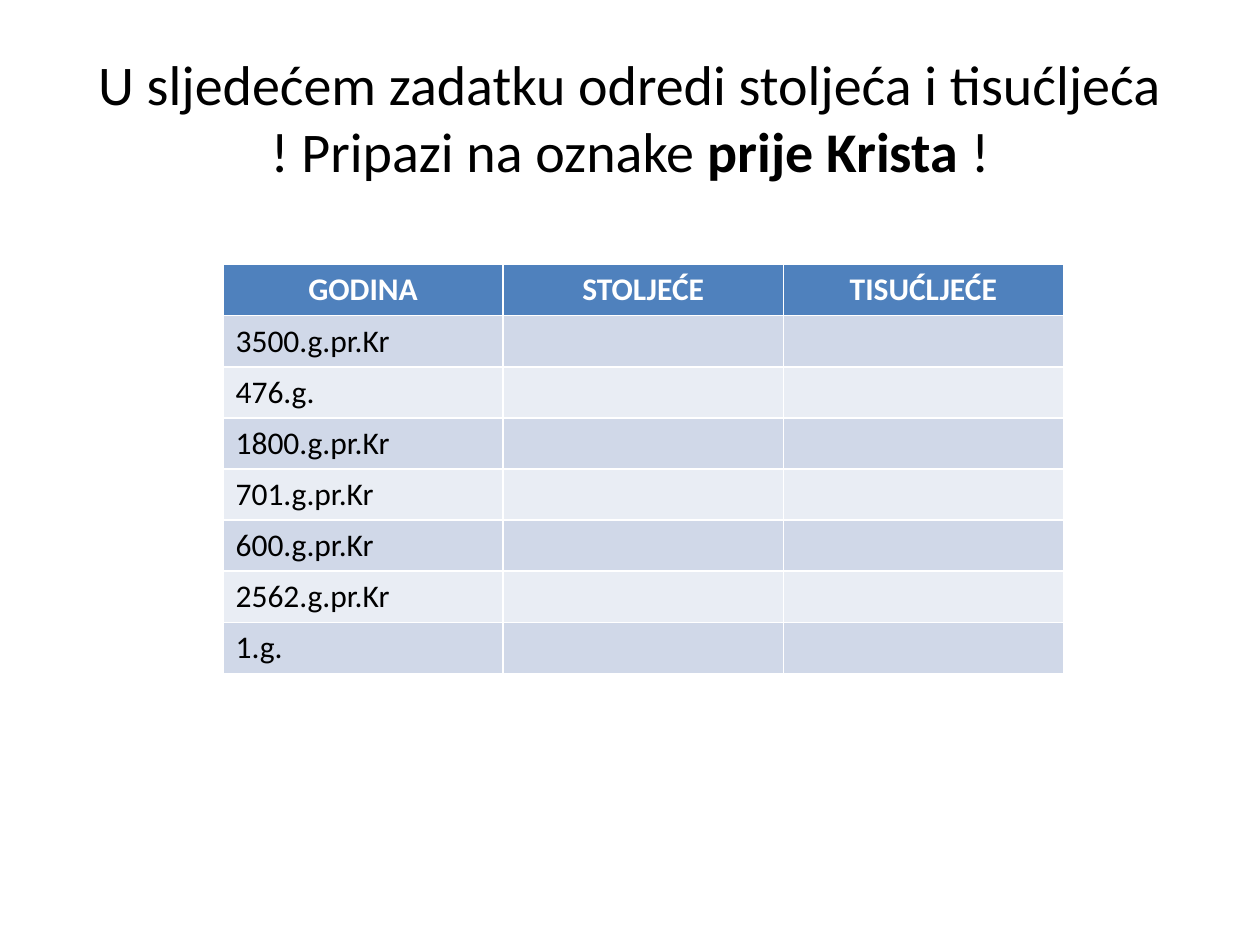
from pptx import Presentation
from pptx.dml.color import RGBColor
from pptx.enum.text import MSO_ANCHOR, MSO_AUTO_SIZE, PP_ALIGN
from pptx.util import Inches, Pt

COLORS = {
    "text": "000000",
    "header_text": "FFFFFF",
    "header": "4F81BD",
    "odd_row": "D0D8E8",
    "even_row": "E9EDF4",
}
HEADINGS = ["GODINA", "STOLJEĆE", "TISUĆLJEĆE"]
YEARS = ["3500.g.pr.Kr", "476.g.", "1800.g.pr.Kr", "701.g.pr.Kr",
         "600.g.pr.Kr", "2562.g.pr.Kr", "1.g."]


class SlideBuilder:
    """Holds the style and the current slide."""

    font_name = "Calibri"
    title_size = Pt(32)
    cell_size = Pt(18)

    def __init__(self, page):
        self.page = page

    def color(self, name):
        return RGBColor.from_string(COLORS[name])

    def style(self, font, size, color):
        font.name = self.font_name
        font.size = size
        font.color.rgb = self.color(color)

    def title(self, lines, left, top, width, height):
        """Each line is a list of (text, bold) pairs."""
        box = self.page.shapes.title
        box.left, box.top = Inches(left), Inches(top)
        box.width, box.height = Inches(width), Inches(height)
        frame = box.text_frame
        frame.auto_size = MSO_AUTO_SIZE.NONE
        frame.vertical_anchor = MSO_ANCHOR.MIDDLE
        para = frame.paragraphs[0]
        para.alignment = PP_ALIGN.CENTER
        self.style(para.font, self.title_size, "text")
        for number, line in enumerate(lines):
            if number:
                para.add_line_break()
            for text, bold in line:
                span = para.add_run()
                span.text = text
                self.style(span.font, self.title_size, "text")
                span.font.bold = bold

    def cell(self, cell, text, fill, color, header):
        cell.fill.solid()
        cell.fill.fore_color.rgb = self.color(fill)
        cell.text = text
        para = cell.text_frame.paragraphs[0]
        self.style(para.font, self.cell_size, color)
        para.font.bold = header
        if header:
            para.alignment = PP_ALIGN.CENTER

    def table(self, headings, years, left, top, width, height):
        rows = [headings] + [[year] + [""] * (len(headings) - 1) for year in years]
        # The default table style supplies the white cell borders
        table = self.page.shapes.add_table(
            len(rows), len(headings), Inches(left), Inches(top),
            Inches(width), Inches(height)).table
        for r, texts in enumerate(rows):
            header = r == 0
            band = "odd_row" if r % 2 else "even_row"
            for c, text in enumerate(texts):
                self.cell(table.cell(r, c), text,
                          "header" if header else band,
                          "header_text" if header else "text", header)


def main():
    deck = Presentation()
    deck.slide_width, deck.slide_height = Inches(10), Inches(7.5)
    # Title Only layout
    builder = SlideBuilder(deck.slides.add_slide(deck.slide_layouts[5]))

    # Task
    builder.title([
        [("U sljedećem zadatku odredi stoljeća i tisućljeća", False)],
        [("! Pripazi na oznake ", False), ("prije Krista ", True), ("!", False)],
    ], 0.5, 0.3, 9, 1.25)

    # Years to place in centuries and millennia
    builder.table(HEADINGS, YEARS, 1.77, 2.1, 6.67, 3.24)

    deck.save("out.pptx")


if __name__ == "__main__":
    main()
